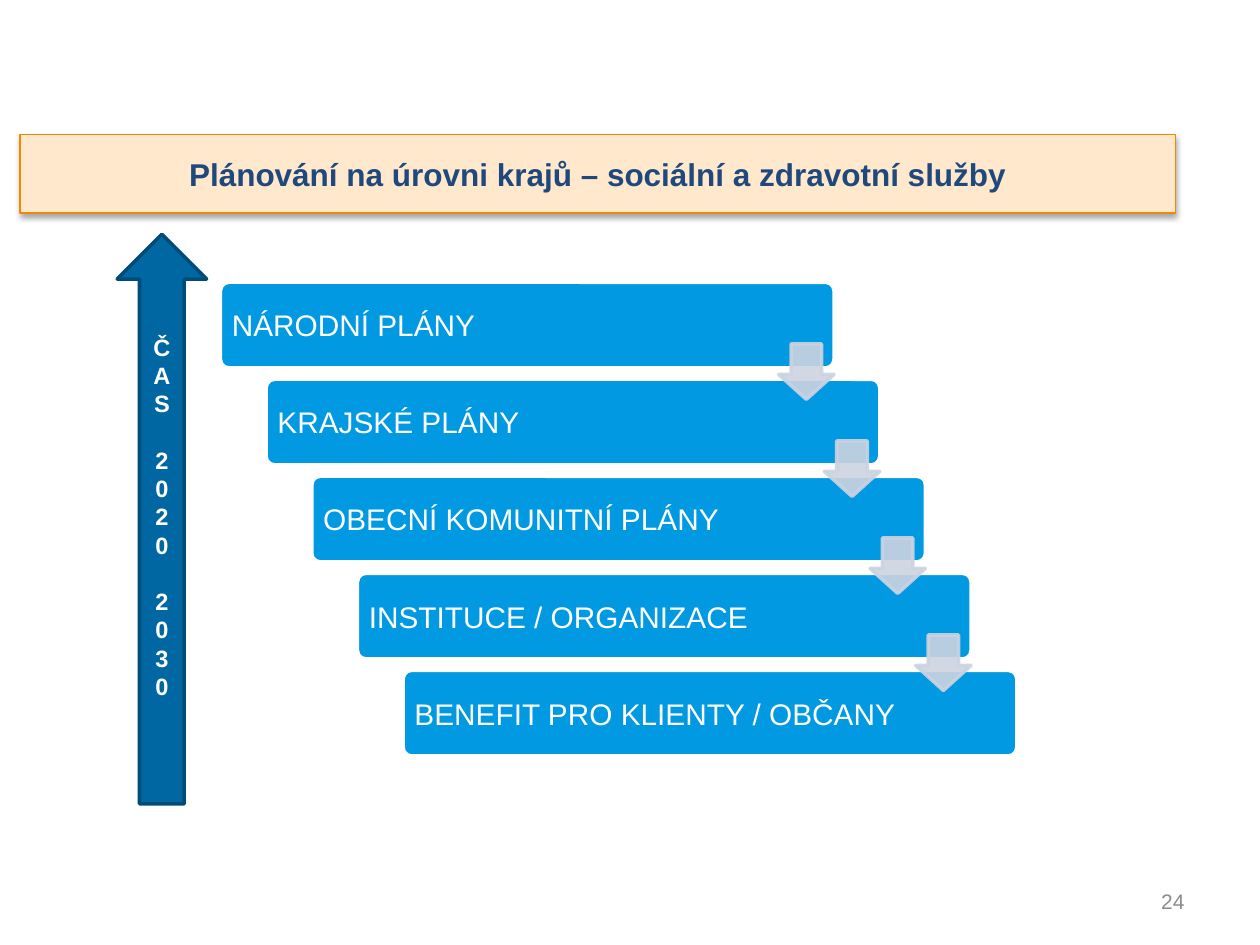
from dataclasses import dataclass

from lxml.etree import SubElement
from pptx import Presentation
from pptx.dml.color import RGBColor
from pptx.enum.shapes import MSO_SHAPE as Preset
from pptx.enum.text import MSO_ANCHOR as Anchor, PP_ALIGN as Align
from pptx.oxml.ns import qn
from pptx.shapes.autoshape import Shape
from pptx.slide import Slide
from pptx.util import Inches, Pt

WHITE = RGBColor(0xFF, 0xFF, 0xFF)
STEP_BLUE = RGBColor(0x00, 0x99, 0xE2)
ARROW_GREY = RGBColor(0xCC, 0xD3, 0xE0)
TIME_BLUE = RGBColor(0x00, 0x67, 0xA2)
TIME_EDGE = RGBColor(0x00, 0x4C, 0x78)
BANNER_CREAM = RGBColor(0xFF, 0xE8, 0xCB)
BANNER_ORANGE = RGBColor(0xF3, 0x87, 0x00)
TITLE_NAVY = RGBColor(0x1F, 0x49, 0x7D)
NUMBER_GREY = RGBColor(0x8C, 0x8C, 0x8C)

FONT = "Arial"
STEPS = (
    "NÁRODNÍ PLÁNY",
    "KRAJSKÉ PLÁNY",
    "OBECNÍ KOMUNITNÍ PLÁNY",
    "INSTITUCE / ORGANIZACE",
    "BENEFIT PRO KLIENTY / OBČANY",
)
STEP_LEFT, STEP_TOP = 1.75, 2.24
STEP_WIDTH, STEP_HEIGHT = 4.87, 0.68
COLUMN = 1.45 / (len(STEPS) - 1)
ROW = 0.77
ARROW_SIZE = 0.44
ARROW_DROP = 0.49


@dataclass(frozen=True)
class Box:
    left: float
    top: float
    width: float
    height: float

    def lengths(self) -> tuple:
        return tuple(map(Inches, (self.left, self.top, self.width, self.height)))


@dataclass(frozen=True)
class Look:
    preset: Preset
    fill: RGBColor
    line: RGBColor
    line_width: float
    adjustments: tuple = ()


@dataclass(frozen=True)
class Lettering:
    size: float
    color: RGBColor
    align: Align
    bold: bool = False


STEP_LOOK = Look(Preset.ROUNDED_RECTANGLE, STEP_BLUE, WHITE, 2, (0.1,))
LINK_LOOK = Look(Preset.DOWN_ARROW, ARROW_GREY, ARROW_GREY, 2, (0.55, 0.45))
TIME_LOOK = Look(Preset.UP_ARROW, TIME_BLUE, TIME_EDGE, 2)
BANNER_LOOK = Look(Preset.RECTANGLE, BANNER_CREAM, BANNER_ORANGE, 0.75)


def add_preset(slide: Slide, box: Box, look: Look) -> Shape:
    shape = slide.shapes.add_shape(look.preset, *box.lengths())
    shape.shadow.inherit = False
    shape.fill.solid()
    shape.fill.fore_color.rgb = look.fill
    shape.line.color.rgb = look.line
    shape.line.width = Pt(look.line_width)
    for index, value in enumerate(look.adjustments):
        shape.adjustments[index] = value
    return shape


def write(shape: Shape, lines: tuple, lettering: Lettering, gap: float = 0) -> None:
    frame = shape.text_frame
    frame.word_wrap = True
    frame.vertical_anchor = Anchor.MIDDLE
    for index, line in enumerate(lines):
        paragraph = frame.add_paragraph() if index else frame.paragraphs[0]
        paragraph.text = line
        paragraph.alignment = lettering.align
        if index and gap:
            paragraph.space_before = Pt(gap)
        font = paragraph.font
        font.name, font.size, font.bold = FONT, Pt(lettering.size), lettering.bold
        font.color.rgb = lettering.color


def set_opacity(shape: Shape, percent: int) -> None:
    for color in shape.element.spPr.iter(qn("a:srgbClr")):
        SubElement(color, qn("a:alpha"), val=str(percent * 1000))


def add_drop_shadow(shape: Shape) -> None:
    effects = shape.element.spPr.find(qn("a:effectLst"))
    shadow = SubElement(effects, qn("a:outerShdw"), blurRad=str(Pt(3.1)),
                        dist=str(Pt(1.8)), dir="5400000", rotWithShape="0")
    color = SubElement(shadow, qn("a:srgbClr"), val="000000")
    SubElement(color, qn("a:alpha"), val="35000")


def add_steps(slide: Slide) -> None:
    boxes = [Box(STEP_LEFT + index * COLUMN, STEP_TOP + index * ROW, STEP_WIDTH, STEP_HEIGHT)
             for index in range(len(STEPS))]
    for box, label in zip(boxes, STEPS):
        step = add_preset(slide, box, STEP_LOOK)
        step.text_frame.margin_left = Inches(0.07)
        write(step, (label,), Lettering(17, WHITE, Align.LEFT))
    for box in boxes[:-1]:
        link_box = Box(box.left + box.width - ARROW_SIZE, box.top + ARROW_DROP,
                       ARROW_SIZE, ARROW_SIZE)
        set_opacity(add_preset(slide, link_box, LINK_LOOK), 90)


def add_time_arrow(slide: Slide) -> None:
    arrow = add_preset(slide, Box(0.93, 1.86, 0.71, 4.52), TIME_LOOK)
    arrow.text_frame.margin_bottom = Inches(0.27)
    write(arrow, ("ČAS", "2020", "2030"), Lettering(13.5, WHITE, Align.CENTER, True), 16)


def add_banner(slide: Slide) -> None:
    banner = add_preset(slide, Box(0.16, 1.07, 9.17, 0.62), BANNER_LOOK)
    add_drop_shadow(banner)
    write(banner, ("Plánování na úrovni krajů – sociální a zdravotní služby",),
          Lettering(18, TITLE_NAVY, Align.CENTER, True))


def add_slide_number(slide: Slide) -> None:
    number = slide.shapes.add_textbox(*Box(7.17, 6.95, 2.33, 0.4).lengths())
    write(number, ("24",), Lettering(12, NUMBER_GREY, Align.RIGHT))


def main() -> None:
    presentation = Presentation()
    presentation.slide_width, presentation.slide_height = Inches(10), Inches(7.5)
    slide = presentation.slides.add_slide(presentation.slide_layouts[6])
    add_steps(slide)
    add_slide_number(slide)
    add_time_arrow(slide)
    add_banner(slide)
    presentation.save("out.pptx")


if __name__ == "__main__":
    main()
